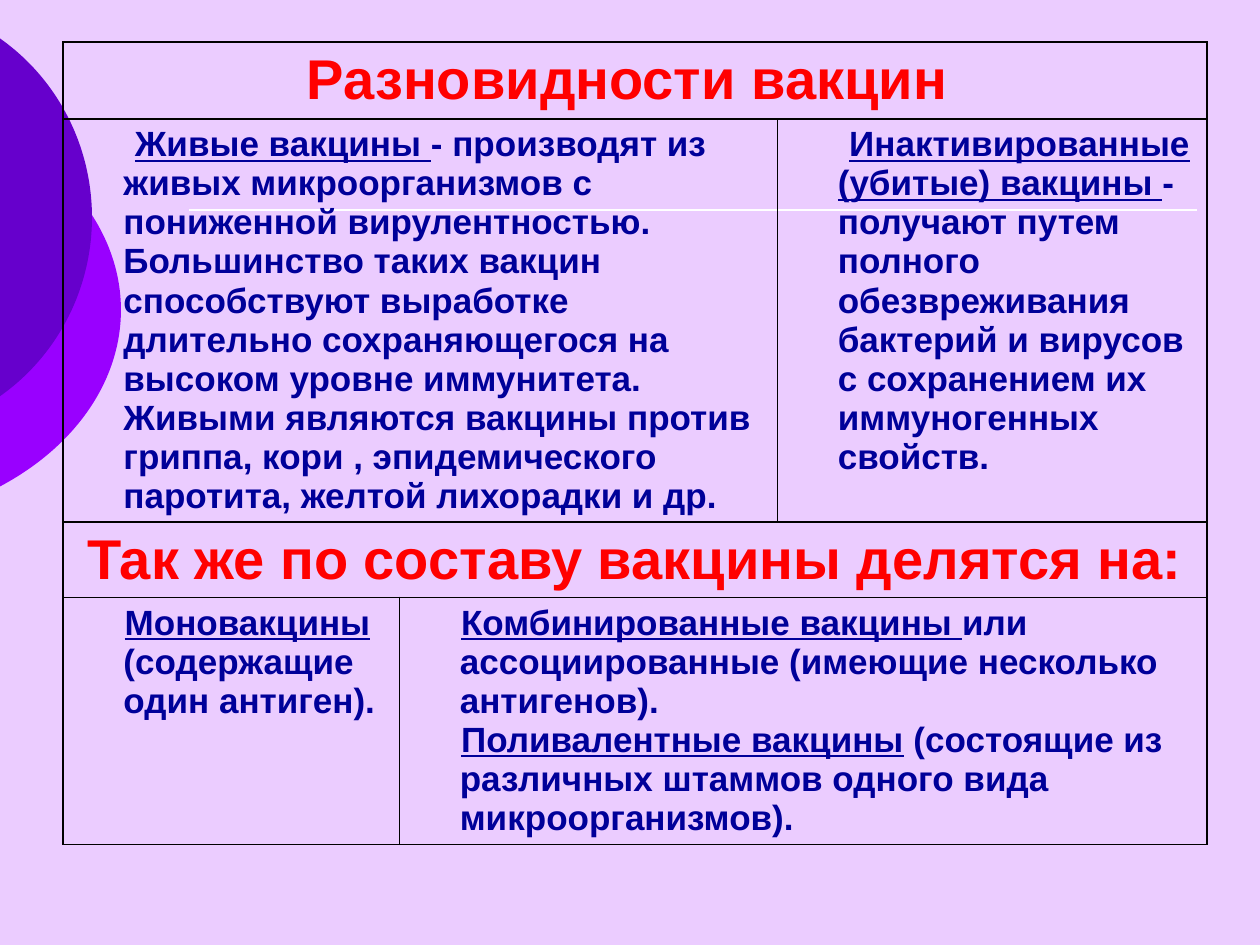
from dataclasses import dataclass
from math import acos, cos, sin, tan

from lxml.etree import SubElement
from pptx import Presentation
from pptx.dml.color import RGBColor as Rgb
from pptx.enum.shapes import MSO_CONNECTOR as Conn
from pptx.enum.text import PP_ALIGN as Align
from pptx.oxml.ns import qn
from pptx.util import Inches, Pt


@dataclass(frozen=True)
class Theme:
    back: str = "EBCCFF"
    light: str = "9900FF"
    dark: str = "6600CC"
    rule: str = "FFFFFF"
    grid: str = "000000"
    head: str = "FF0000"
    body: str = "000099"
    font: str = "Arial"
    big: int = 32
    small: int = 20


def write(par, text, size, color, font, under=False):
    """Add one bold run to a paragraph."""
    run = par.add_run()
    run.text = text
    face = run.font
    face.name, face.size, face.bold = font, Pt(size), True
    face.underline = under
    face.color.rgb = Rgb.from_string(color)


class Page:
    def __init__(self, deck, theme):
        self.theme = theme
        self.slide = deck.slides.add_slide(deck.slide_layouts[6])
        fill = self.slide.background.fill
        fill.solid()
        fill.fore_color.rgb = Rgb.from_string(theme.back)

    def arc(self, left, top, width, height, color):
        """Draw an ellipse cut off at the slide's left edge, as two curves."""
        form = self.slide.shapes.build_freeform(Inches(left), Inches(top))
        form.add_line_segments([(Inches(left + width), Inches(top)),
                                (Inches(left + width), Inches(top + height))])
        shape = form.convert_to_shape()
        shape.shadow.inherit = False
        shape.fill.solid()
        shape.fill.fore_color.rgb = Rgb.from_string(color)
        shape.line.fill.background()

        # Handles of a curve from the cut to the tip
        rx, ry = width / 2, height / 2
        turn = acos((-0.01 - left - rx) / rx)
        pull = 4 / 3 * tan(turn / 4)
        cut = (cos(turn), sin(turn))
        near = (cut[0] + pull * cut[1], cut[1] - pull * cut[0])
        tip = (1, pull)

        def flip(dot):
            return dot[0], -dot[1]

        path = next(shape._element.iter(qn("a:path")))
        for old in list(path):
            path.remove(old)
        for tag, dots in (("moveTo", [flip(cut)]),
                          ("cubicBezTo", [flip(near), flip(tip), (1, 0)]),
                          ("cubicBezTo", [tip, near, cut]),
                          ("close", [])):
            step = SubElement(path, qn(f"a:{tag}"))
            for x, y in dots:
                SubElement(step, qn("a:pt"), x=str(Inches(rx + rx * x)),
                           y=str(Inches(ry + ry * y)))

    def line(self, x1, y1, x2, y2):
        ends = [Inches(v) for v in (x1, y1, x2, y2)]
        link = self.slide.shapes.add_connector(Conn.STRAIGHT, *ends)
        link.line.color.rgb = Rgb.from_string(self.theme.rule)
        link.line.width = Pt(1)
        SubElement(link._element.spPr, qn("a:effectLst"))

    def table(self, left, top, cols, rows):
        size = [Inches(v) for v in (left, top, sum(cols), sum(rows))]
        grid = self.slide.shapes.add_table(len(rows), len(cols), *size).table
        grid.first_row = grid.horz_banding = False
        for col, width in zip(grid.columns, cols):
            col.width = Inches(width)
        for row, height in zip(grid.rows, rows):
            row.height = Inches(height)
        for cell in grid.iter_cells():
            self.frame(cell)
        return grid

    def frame(self, cell):
        """Give a cell four thin borders and no fill."""
        props = cell._tc.get_or_add_tcPr()
        for side in ("lnL", "lnR", "lnT", "lnB"):
            edge = SubElement(props, qn(f"a:{side}"), w=str(Pt(1)))
            fill = SubElement(edge, qn("a:solidFill"))
            SubElement(fill, qn("a:srgbClr"), val=self.theme.grid)
        cell.fill.background()

    def indent(self, par, first):
        props = par._p.get_or_add_pPr()
        props.set("marL", str(Inches(0.38)))
        props.set("indent", str(Inches(first)))

    def head(self, cell, text):
        par = cell.text_frame.paragraphs[0]
        par.alignment = Align.CENTER
        self.indent(par, -0.38)
        write(par, text, self.theme.big, self.theme.head, self.theme.font)

    def body(self, cell, parts, first):
        """Fill a cell with (underlined term, plain rest) paragraphs."""
        look = self.theme
        frame = cell.text_frame
        for i, (term, rest) in enumerate(parts):
            par = frame.add_paragraph() if i else frame.paragraphs[0]
            self.indent(par, first)
            write(par, term, look.small, look.body, look.font, under=True)
            write(par, rest, look.small, look.body, look.font)


LIVE = [("Живые вакцины ",
         "- производят из живых микроорганизмов с пониженной вирулентностью. "
         "Большинство таких вакцин способствуют выработке длительно "
         "сохраняющегося на высоком уровне иммунитета. Живыми являются вакцины "
         "против гриппа, кори , эпидемического паротита, желтой лихорадки и др.")]
DEAD = [("Инактивированные (убитые) вакцины ",
         "- получают путем полного обезвреживания бактерий и вирусов "
         "с сохранением их иммуногенных свойств.")]
MONO = [("Моновакцины", " (содержащие один антиген).")]
MIXED = [("Комбинированные вакцины ",
          "или ассоциированные (имеющие несколько антигенов)."),
         ("Поливалентные вакцины",
          " (состоящие из различных штаммов одного вида микроорганизмов).")]


def main():
    deck = Presentation()
    deck.slide_width, deck.slide_height = Inches(10), Inches(7.5)
    theme = Theme()
    page = Page(deck, theme)

    # Backdrop
    page.arc(-3.54, 0.75, 4.5, 3.42, theme.light)
    page.arc(-2.65, 0, 3.38, 3.45, theme.dark)
    page.line(1.5, 5 / 3, 9.5, 5 / 3)

    # Table grid with its merged cells
    grid = page.table(0.5, 1 / 3, [2.67, 3, 3.41], [0.61, 3.14, 0.42, 1.77])
    for row, start, end in ((0, 0, 2), (1, 0, 1), (2, 0, 2), (3, 1, 2)):
        grid.cell(row, start).merge(grid.cell(row, end))

    # Table text
    page.head(grid.cell(0, 0), "Разновидности вакцин ")
    page.head(grid.cell(2, 0), "Так же по составу вакцины делятся на:")
    for row, col, parts, first in ((1, 0, LIVE, 0.09), (1, 2, DEAD, 0.09),
                                   (3, 0, MONO, 0.01), (3, 1, MIXED, 0.01)):
        page.body(grid.cell(row, col), parts, first)

    deck.save("out.pptx")


if __name__ == "__main__":
    main()
